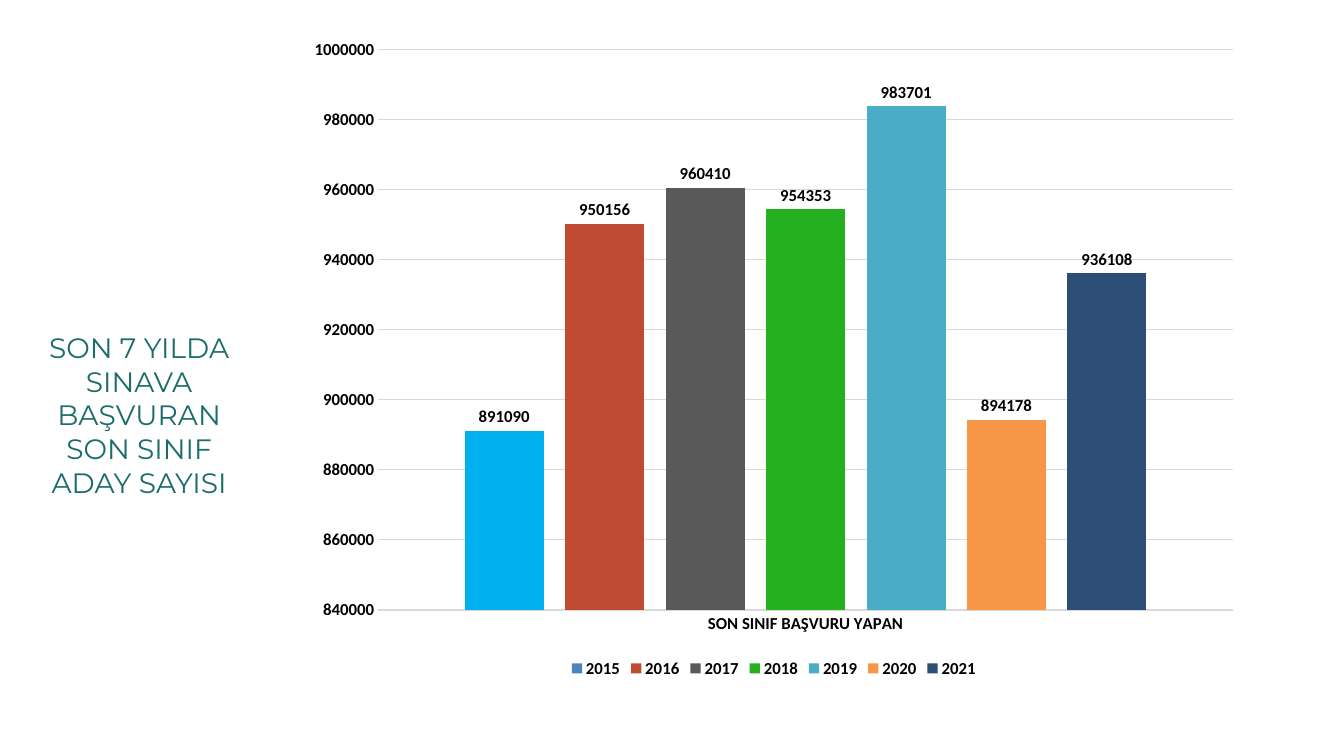
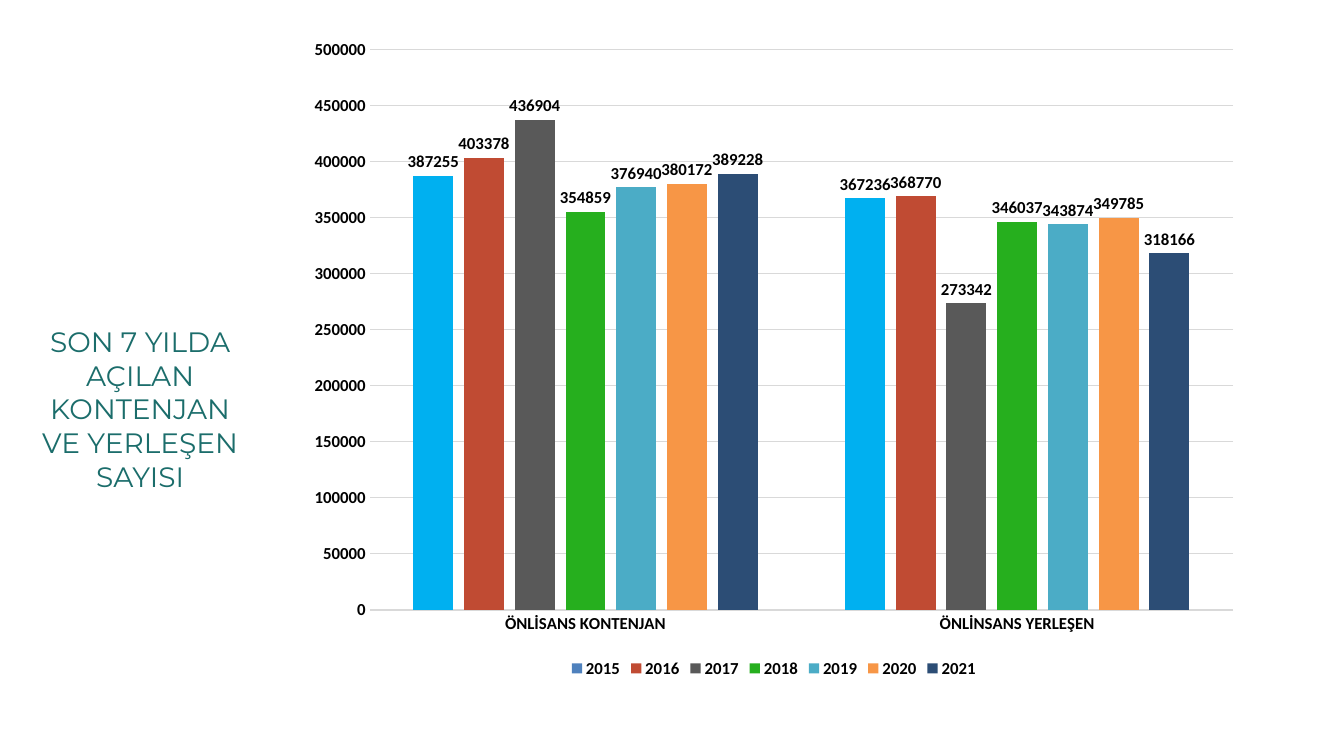
from pptx import Presentation
from pptx.chart.data import CategoryChartData
from pptx.dml.color import RGBColor
from pptx.enum import chart as charts, text
from pptx.util import Inches, Pt

TEAL = RGBColor(0x1B, 0x6D, 0x6B)
BLACK = RGBColor(0, 0, 0)
GRID_GREY = RGBColor(0xD9, 0xD9, 0xD9)
FIRST_YEAR_BAR = RGBColor(0x00, 0xB0, 0xF0)
YEAR_COLORS = {
    "2015": RGBColor(0x4F, 0x81, 0xBD),
    "2016": RGBColor(0xC0, 0x4B, 0x33),
    "2017": RGBColor(0x59, 0x59, 0x59),
    "2018": RGBColor(0x26, 0xAF, 0x1E),
    "2019": RGBColor(0x4B, 0xAC, 0xC6),
    "2020": RGBColor(0xF7, 0x96, 0x46),
    "2021": RGBColor(0x2C, 0x4D, 0x75),
}


class Deck:
    TITLE_FONT = "Montserrat"
    CHART_FONT = "Calibri"
    TITLE_ONLY = 5

    def __init__(self):
        self.presentation = Presentation()
        self.presentation.slide_width = Inches(13.33)
        self.presentation.slide_height = Inches(7.5)
        self.slide = None

    def add_slide(self):
        layout = self.presentation.slide_layouts[self.TITLE_ONLY]
        self.slide = self.presentation.slides.add_slide(layout)

    def style_font(self, font, size=12, bold=True):
        font.name = self.CHART_FONT
        font.size = Pt(size)
        font.bold = bold
        font.color.rgb = BLACK

    def add_title(self, wording, left, top, width):
        title = self.slide.shapes.title
        title.left, title.top = Inches(left), Inches(top)
        title.width, title.height = Inches(width), Inches(1.78)
        frame = title.text_frame
        frame.text = wording
        frame.word_wrap = True
        frame.auto_size = text.MSO_AUTO_SIZE.SHAPE_TO_FIT_TEXT
        frame.vertical_anchor = text.MSO_ANCHOR.TOP
        paragraph = frame.paragraphs[0]
        paragraph.alignment = text.PP_ALIGN.CENTER
        font = paragraph.runs[0].font
        font.name = self.TITLE_FONT
        font.size = Pt(20)
        font.color.rgb = TEAL

    def add_year_chart(self, counts, scale):
        data = CategoryChartData()
        data.categories = list(counts)
        for year, values in zip(YEAR_COLORS, zip(*counts.values())):
            data.add_series(year, values)
        chart = self.slide.shapes.add_chart(
            charts.XL_CHART_TYPE.COLUMN_CLUSTERED,
            Inches(2.93), Inches(0.26), Inches(9.49), Inches(6.51), data,
        ).chart
        self.style_font(chart.font, 10, False)
        chart.has_title = False
        chart.has_legend = True
        chart.legend.position = charts.XL_LEGEND_POSITION.BOTTOM
        chart.legend.include_in_layout = False
        self.style_font(chart.legend.font)
        self.style_axes(chart, scale)
        self.style_bars(chart.plots[0])

    def style_axes(self, chart, scale):
        for axis in (chart.category_axis, chart.value_axis):
            axis.major_tick_mark = charts.XL_TICK_MARK.NONE
            axis.minor_tick_mark = charts.XL_TICK_MARK.NONE
            self.style_font(axis.tick_labels.font)
        counts_axis = chart.value_axis
        counts_axis.minimum_scale, counts_axis.maximum_scale, counts_axis.major_unit = scale
        counts_axis.format.line.fill.background()
        counts_axis.has_major_gridlines = True
        for rule in (chart.category_axis.format.line, counts_axis.major_gridlines.format.line):
            rule.color.rgb = GRID_GREY
            rule.width = Pt(0.75)

    def style_bars(self, plot):
        plot.vary_by_categories = False
        plot.gap_width = 219
        plot.overlap = -27
        for series in plot.series:
            self.fill(series, YEAR_COLORS[series.name])
            series.invert_if_negative = False
            labels = series.data_labels
            labels.show_value = True
            labels.position = charts.XL_LABEL_POSITION.OUTSIDE_END
            self.style_font(labels.font)
        first_year = plot.series[0]
        for index in range(len(plot.categories)):
            self.fill(first_year.points[index], FIRST_YEAR_BAR)

    def fill(self, bar, color):
        bar.format.fill.solid()
        bar.format.fill.fore_color.rgb = color


def main():
    deck = Deck()

    deck.add_slide()
    deck.add_title("SON 7 YILDA SINAVA BAŞVURAN SON SINIF ADAY SAYISI", 0.29, 3.23, 2.18)
    deck.add_year_chart(
        {"SON SINIF BAŞVURU YAPAN": (891090, 950156, 960410, 954353, 983701, 894178, 936108)},
        (840000, 1000000, 20000),
    )

    deck.add_slide()
    deck.add_title("SON 7 YILDA AÇILAN KONTENJAN VE YERLEŞEN SAYISI", 0.19, 3.17, 2.4)
    deck.add_year_chart(
        {
            "ÖNLİSANS KONTENJAN": (387255, 403378, 436904, 354859, 376940, 380172, 389228),
            "ÖNLİNSANS YERLEŞEN": (367236, 368770, 273342, 346037, 343874, 349785, 318166),
        },
        (0, 500000, 50000),
    )

    deck.presentation.save("out.pptx")


if __name__ == "__main__":
    main()
